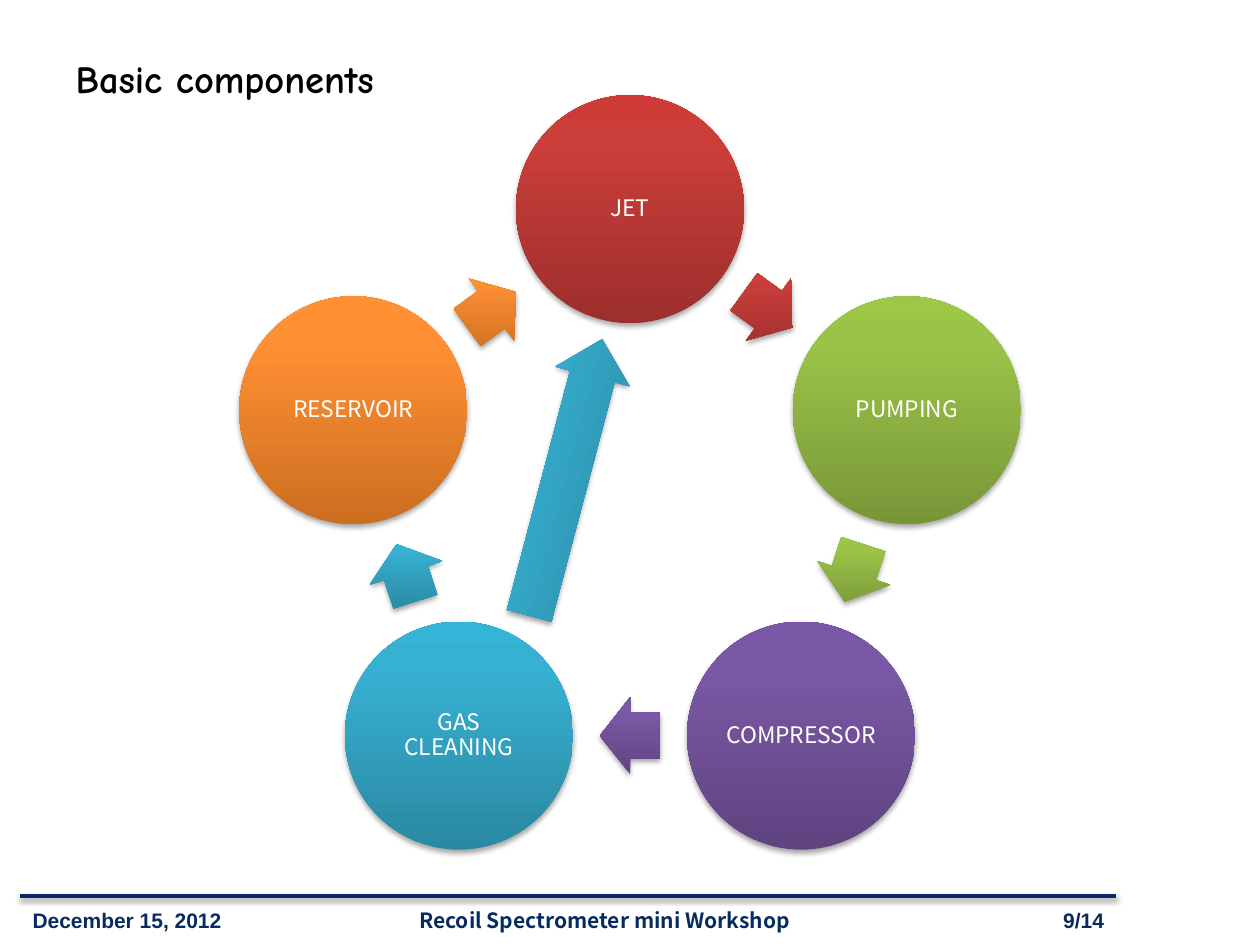
from math import cos, radians, sin

from lxml.etree import SubElement
from pptx import Presentation
from pptx.dml.color import RGBColor
from pptx.enum.shapes import MSO_CONNECTOR as Connector, MSO_SHAPE as Shape
from pptx.enum.text import MSO_ANCHOR as Anchor, PP_ALIGN as Align
from pptx.oxml import parse_xml
from pptx.oxml.ns import nsdecls, qn
from pptx.util import Inches, Pt

COLORS = {"navy": "072B61", "black": "000000", "white": "FFFFFF"}
GRADIENTS = {
    "red": ("9C2F2D", "CB3E3A", "CE3B37"),
    "green": ("779737", "9BC348", "9DC746"),
    "purple": ("5F4480", "7B58A6", "7C57A8"),
    "cyan": ("2A88A2", "37B1D2", "34B4D6"),
    "orange": ("CC6E20", "FF9034", "FF9136"),
}
STAGES = [
    ("JET", "red"),
    ("PUMPING", "green"),
    ("COMPRESSOR", "purple"),
    ("GAS CLEANING", "cyan"),
    ("RESERVOIR", "orange"),
]
FOOTERS = [
    ("9/14", 8.07, 0.79, "Arial", Align.RIGHT),
    ("Recoil Spectrometer mini Workshop", 2.4, 4.8, "Noto Sans CJK KR", Align.CENTER),
    ("December 15, 2012", 0.16, 1.85, "Arial", Align.LEFT),
]
CENTER_X, CENTER_Y, RING = 5.0, 3.97, 2.31
DIAMETER, ARROW_LENGTH, ARROW_HEIGHT = 1.81, 0.48, 0.61


class SlideBuilder:
    def __init__(self, slide):
        self.slide = slide
        self.shapes = slide.shapes

    def add_text(self, frame, text, align, margin=None, **font):
        frame.word_wrap = True
        frame.vertical_anchor = Anchor.MIDDLE
        if margin is not None:
            for side in ("left", "right", "top", "bottom"):
                setattr(frame, f"margin_{side}", Inches(margin))
        para = frame.paragraphs[0]
        para.alignment = align
        span = para.add_run()
        span.text = text
        color = font.pop("color")
        for name, value in font.items():
            setattr(span.font, name, value)
        span.font.color.rgb = RGBColor.from_string(COLORS[color])
        return para

    def title(self, text, left, top, width, height):
        box = self.shapes.title
        place = {"left": left, "top": top, "width": width, "height": height}
        for name, value in place.items():
            setattr(box, name, Inches(value))
        self.add_text(box.text_frame, text, Align.LEFT, name="Comic Neue",
                      size=Pt(22), bold=True, color="black")

    def footer(self, text, left, width, font_name, align):
        box = self.shapes.add_textbox(Inches(left), Inches(7.15), Inches(width), Inches(0.3))
        self.add_text(box.text_frame, text, align, name=font_name,
                      size=Pt(12), bold=True, color="navy")

    def cast_shadow(self, effects, distance, opacity):
        shadow = SubElement(effects, qn("a:outerShdw"), blurRad=str(Pt(3.1)),
                            dist=str(Pt(distance)), dir="5400000", rotWithShape="0")
        color = SubElement(shadow, qn("a:srgbClr"), val=COLORS["black"])
        SubElement(color, qn("a:alpha"), val=str(opacity * 1000))

    def rule(self, left, right, y):
        line = self.shapes.add_connector(
            Connector.STRAIGHT, Inches(left), Inches(y), Inches(right), Inches(y))
        line.line.color.rgb = RGBColor.from_string(COLORS["navy"])
        line.line.width = Pt(2)
        effects = SubElement(line._element.spPr, qn("a:effectLst"))
        self.cast_shadow(effects, 1.6, 38)

    def gradient_shape(self, kind, x, y, width, height, color, turns=False):
        shape = self.shapes.add_shape(
            kind, Inches(x - width / 2), Inches(y - height / 2), Inches(width), Inches(height))
        stops = "".join(
            f'<a:gs pos="{position}000"><a:srgbClr val="{value}"/></a:gs>'
            for position, value in zip((0, 80, 100), GRADIENTS[color]))
        gradient = parse_xml(
            f'<a:gradFill {nsdecls("a")} rotWithShape="{int(turns)}"><a:gsLst>{stops}</a:gsLst>'
            '<a:lin ang="16200000" scaled="0"/></a:gradFill>')
        shape._element.spPr.find(qn("a:prstGeom")).addnext(gradient)
        shape.line.fill.background()
        shape.shadow.inherit = False
        self.cast_shadow(shape._element.spPr.find(qn("a:effectLst")), 1.8, 35)
        return shape

    def circle(self, text, x, y, color):
        shape = self.gradient_shape(Shape.OVAL, x, y, DIAMETER, DIAMETER, color)
        para = self.add_text(shape.text_frame, text, Align.CENTER, 0.02,
                             name="Noto Sans CJK KR", size=Pt(13), color="white")
        para.line_spacing = 0.9

    def arrow(self, x, y, length, rotation, color, turns=False):
        shape = self.gradient_shape(
            Shape.RIGHT_ARROW, x, y, length, ARROW_HEIGHT, color, turns)
        shape.adjustments[0] = 0.6
        shape.adjustments[1] = 0.5
        shape.rotation = rotation


def ring_point(angle, radius):
    return CENTER_X + radius * sin(radians(angle)), CENTER_Y - radius * cos(radians(angle))


def main():
    deck = Presentation()
    deck.slide_width, deck.slide_height = Inches(10), Inches(7.5)
    page = SlideBuilder(deck.slides.add_slide(deck.slide_layouts[5]))
    page.rule(0.16, 8.86, 7.11)
    for footer in FOOTERS:
        page.footer(*footer)
    page.title("Basic components", 0.5, 0.3, 8.8, 0.64)

    step = 360 / len(STAGES)
    for index, (label, color) in enumerate(STAGES):
        page.circle(label, *ring_point(index * step, RING), color)
        heading = (index + 0.5) * step
        x, y = ring_point(heading, RING * cos(radians(step / 2)))
        page.arrow(x, y, ARROW_LENGTH, heading, color)
    page.arrow(4.49, 3.79, 2.27, 284.8, "cyan", turns=True)
    deck.save("out.pptx")


if __name__ == "__main__":
    main()
